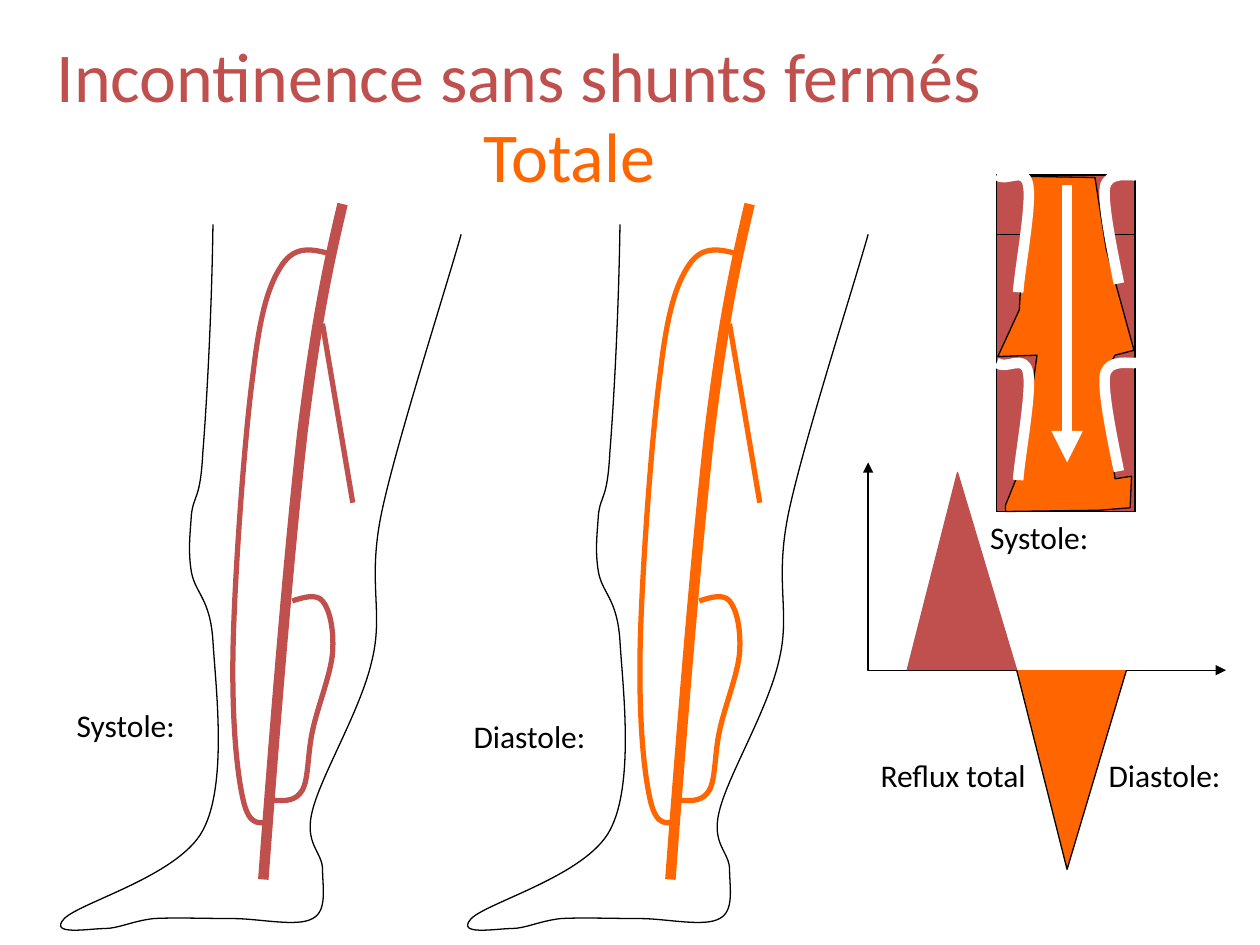
from lxml.etree import SubElement
from pptx import Presentation
from pptx.dml.color import RGBColor
from pptx.enum.shapes import MSO_CONNECTOR, MSO_SHAPE
from pptx.oxml.ns import qn
from pptx.util import Pt

RED, ORANGE, BLACK, WHITE = "C0504D", "FF6600", "000000", "FFFFFF"
LEG_STEP = 232.6
VALVE_STEP = 107.3

# Curves: a start point, then three points (two controls, one end) per segment.
LEG = [
    (121.7, 128.2),
    (121, 179.3), (118.1, 231.1), (115.9, 258.5),
    (114.5, 285.8), (110.9, 282.2), (109.4, 293.8),
    (108.7, 304.6), (107.3, 314.6), (109.4, 326.9),
    (111.6, 339.1), (120.2, 342), (121.7, 366.5),
    (123.1, 391), (130.3, 447.8), (115.9, 474.5),
    (102.2, 500.4), (46.1, 515.5), (36.7, 524.9),
    (27.4, 535), (51.1, 530.6), (59.8, 530.6),
    (67.7, 530.6), (75.6, 526.3), (87.8, 524.9),
    (100.1, 524.2), (118.1, 524.9), (133.2, 524.9),
    (148.3, 524.9), (169.9, 529.9), (178.6, 524.9),
    (187.2, 520.6), (184.3, 506.9), (184.3, 496.8),
    (184.3, 486.7), (173.5, 482.4), (178.6, 463),
    (183.6, 442.8), (205.9, 406.1), (212.4, 378),
    (219.6, 349.2), (209.5, 333.4), (218.2, 292.3),
    (226.8, 252), (254.2, 167), (263.5, 133.9),
]
DEEP_VEIN = [
    (195.8, 116.6),
    (187.9, 149.8), (180.7, 182.9), (172.8, 247.7),
    (165.6, 311.8), (157.7, 406.8), (150.5, 502.6),
]
LONG_VEIN = [
    (190.1, 145.4),
    (179.3, 142.6), (169.2, 139.7), (161.3, 151.2),
    (154.1, 162), (149, 176.4), (144.7, 213.1),
    (139.7, 249.8), (133.9, 331.2), (133.2, 372.2),
    (132.5, 412.6), (135.4, 441.4), (139, 457.2),
    (142.6, 473), (149, 470.9), (155.5, 468.7),
]
THIGH_BRANCH = [(184.3, 185), (191.5, 227.5), (198.7, 270), (201.6, 287.3)]
CALF_VEIN = [
    (167, 343.4),
    (173.5, 341.3), (180.7, 339.1), (184.3, 343.4),
    (188.6, 348.5), (190.8, 360), (190.1, 372.2),
    (189.4, 384.5), (181.4, 403.9), (178.6, 417.6),
    (175.7, 430.6), (176.4, 445), (172.8, 451.4),
    (169.2, 457.9), (162.7, 457.9), (155.5, 457.2),
]
LEFT_VALVE = [
    (569.5, 100.1),
    (575.3, 104.4), (585.4, 94.3), (587.5, 105.8),
    (589.7, 116.6), (582.5, 154.8), (581.8, 167),
]
RIGHT_VALVE = [
    (649.4, 100.1),
    (646.6, 100.8), (632.9, 97.2), (631.4, 107.3),
    (630, 118.1), (637.2, 150.5), (639.4, 162),
]
REFLUX = [
    (586.8, 100.8), (625.7, 101.5), (632.2, 142.6), (648, 200.2),
    (637.2, 203), (629.3, 217.4), (637.2, 273.6), (646.6, 272.2),
    (645.8, 290.2), (627.8, 291.6), (574.6, 292.3), (574.6, 288.7),
    (583.9, 265.7), (592.6, 203), (570.2, 203.8), (582.5, 177.1),
]


def rgb(value):
    return RGBColor.from_string(value)


def shift(points, dx=0, dy=0):
    return [(x + dx, y + dy) for x, y in points]


def bend(sp):
    """Turn each run of three straight segments into one cubic curve."""
    lines = list(sp.element.iter(qn("a:lnTo")))
    for i in range(0, len(lines), 3):
        curve = lines[i].makeelement(qn("a:cubicBezTo"))
        lines[i].addprevious(curve)
        for line in lines[i:i + 3]:
            curve.append(line[0])
            line.getparent().remove(line)


class Drawing:
    """Holds the style and the slide, and draws on the current shape tree."""

    font = "Calibri"
    thin = 0.75

    def __init__(self, slide):
        self.slide = slide
        self.shapes = slide.shapes

    def group(self):
        self.shapes = self.slide.shapes.add_group_shape().shapes

    def ungroup(self):
        self.shapes = self.slide.shapes

    def stroke(self, sp, color, width, ends=()):
        sp.line.color.rgb = rgb(color)
        sp.line.width = Pt(width)
        for end in ends:
            SubElement(sp.line._get_or_add_ln(), qn(f"a:{end}"), type="triangle")

    def paint(self, sp, fill, line, width, ends=()):
        sp.shadow.inherit = False
        if fill:
            sp.fill.solid()
            sp.fill.fore_color.rgb = rgb(fill)
        else:
            sp.fill.background()
        self.stroke(sp, line, width, ends)

    def outline(self, points, fill=None, line=BLACK, width=thin, close=False, ends=()):
        vertices = [(Pt(x), Pt(y)) for x, y in points]
        builder = self.shapes.build_freeform(*vertices[0])
        builder.add_line_segments(vertices[1:], close=close)
        sp = builder.convert_to_shape()
        self.paint(sp, fill, line, width, ends)
        return sp

    def curve(self, points, line=BLACK, width=thin):
        bend(self.outline(points, line=line, width=width))

    def rect(self, x, y, w, h, fill):
        sp = self.shapes.add_shape(MSO_SHAPE.RECTANGLE, Pt(x), Pt(y), Pt(w), Pt(h))
        self.paint(sp, fill, BLACK, self.thin)

    def arrow(self, x1, y1, x2, y2, color, width):
        sp = self.shapes.add_connector(
            MSO_CONNECTOR.STRAIGHT, Pt(x1), Pt(y1), Pt(x2), Pt(y2))
        self.stroke(sp, color, width, ["tailEnd"])
        SubElement(sp.element.spPr, qn("a:effectLst"))

    def text(self, text, x, y, w=170, h=29, size=18, color=BLACK):
        tf = self.shapes.add_textbox(Pt(x), Pt(y), Pt(w), Pt(h)).text_frame
        tf.word_wrap = True
        r = tf.paragraphs[0].add_run()
        r.text = text
        r.font.name = self.font
        r.font.size = Pt(size)
        r.font.color.rgb = rgb(color)

    def leg(self, dx, color):
        self.curve(shift(LEG, dx))
        self.group()
        self.curve(shift(DEEP_VEIN, dx), color, 6)
        for vein in (LONG_VEIN, THIGH_BRANCH, CALF_VEIN):
            self.curve(shift(vein, dx), color, 3)
        self.ungroup()

    def flow_chart(self):
        self.outline([(496.1, 264.2), (496.1, 383), (700.6, 383)],
                     ends=["headEnd", "tailEnd"])
        self.outline([(518.4, 383), (547.2, 270), (581, 383)], RED, RED)
        self.outline([(581, 383), (609.8, 496.8), (643.7, 383)], ORANGE)

    def valved_vein(self):
        self.group()
        self.rect(569.5, 100.1, 79.2, 192.2, RED)
        self.rect(569.5, 133.9, 79.2, 158.4, RED)
        self.outline(REFLUX, ORANGE, close=True)
        self.arrow(609.8, 105.8, 609.8, 264.2, WHITE, 6)
        for dy in (VALVE_STEP, 0):
            for valve in (LEFT_VALVE, RIGHT_VALVE):
                self.curve(shift(valve, dy=dy), WHITE, 6)
        self.ungroup()


def main():
    prs = Presentation()
    prs.slide_width, prs.slide_height = Pt(720), Pt(540)
    s = prs.slides.add_slide(prs.slide_layouts[6])
    d = Drawing(s)
    d.text("Incontinence sans shunts fermés", 25.2, 15.1, 686, 127.4, size=40, color=RED)
    d.leg(0, RED)
    d.leg(LEG_STEP, ORANGE)
    d.flow_chart()
    d.text("Totale", 269.3, 60.5, 266.4, 127.4, size=40, color=ORANGE)
    d.text("Systole:", 558.7, 292.3)
    d.text("Diastole:", 626.4, 428.4)
    d.text("Systole:", 36.7, 399.6)
    d.text("Diastole:", 263.5, 406.1)
    d.text("Reflux total", 496.1, 428.4, 113)
    d.valved_vein()
    prs.save("out.pptx")


if __name__ == "__main__":
    main()
